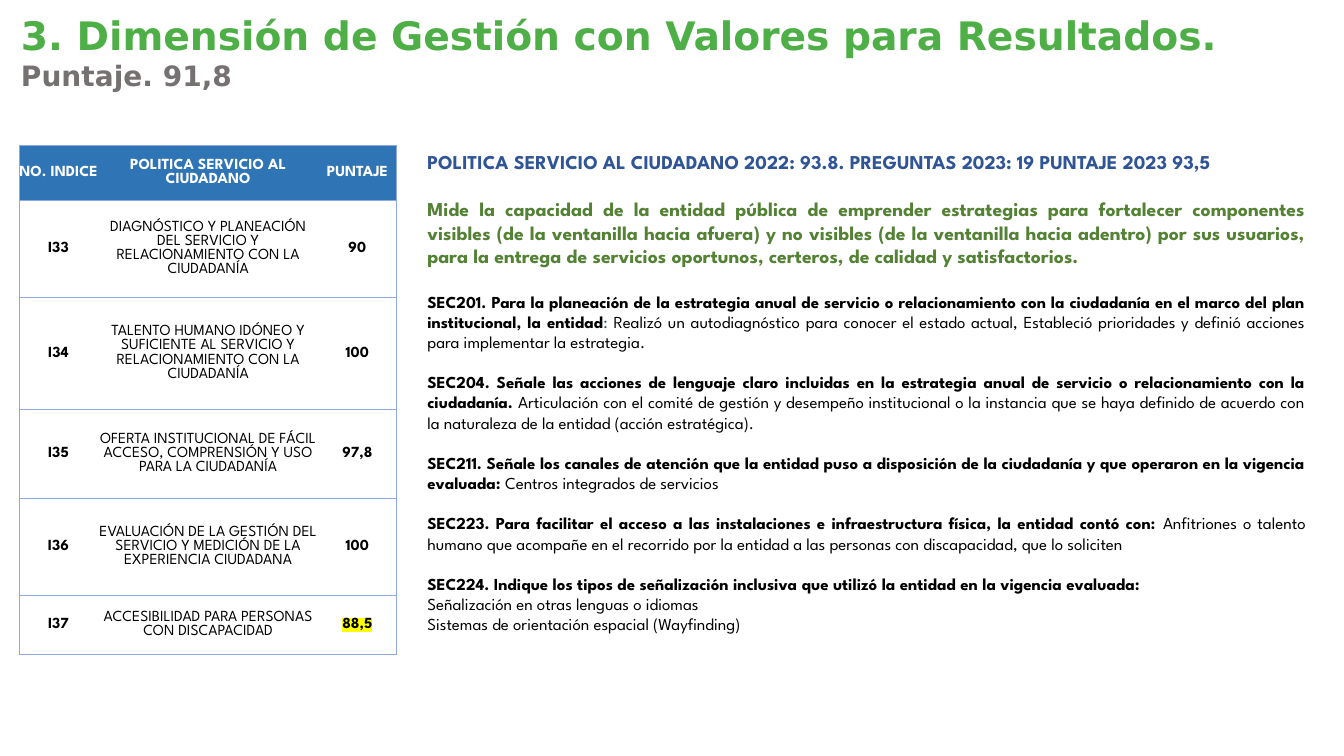
from lxml.etree import SubElement
from pptx import Presentation
from pptx.dml.color import RGBColor
from pptx.enum.text import MSO_ANCHOR, PP_ALIGN
from pptx.oxml.ns import qn
from pptx.util import Emu, Pt

PX = 9144  # one hundredth of an inch
BODY_FONT = "League Spartan"
TITLE_FONT = "DejaVu Sans"
BLACK, WHITE, HEADER_BLUE, GRID_BLUE = "000000", "FFFFFF", "2F75B5", "8EA9DB"
HEADING_BLUE, GREEN, NAVY, YELLOW = "2F5597", "548235", "004885", "FFFF00"

COLUMNS = [78, 219, 77]
ROW_HEIGHTS = [55, 96, 111, 88, 97, 58]
SCORES = [
    ("NO. INDICE", "POLITICA SERVICIO AL CIUDADANO", "PUNTAJE"),
    ("I33", "DIAGNÓSTICO Y PLANEACIÓN DEL SERVICIO Y RELACIONAMIENTO CON LA CIUDADANÍA", "90"),
    ("I34", "TALENTO HUMANO IDÓNEO Y SUFICIENTE AL SERVICIO Y RELACIONAMIENTO CON LA CIUDADANÍA", "100"),
    ("I35", "OFERTA INSTITUCIONAL DE FÁCIL ACCESO, COMPRENSIÓN Y USO PARA LA CIUDADANÍA", "97,8"),
    ("I36", "EVALUACIÓN DE LA GESTIÓN DEL SERVICIO Y MEDICIÓN DE LA EXPERIENCIA CIUDADANA", "100"),
    ("I37", "ACCESIBILIDAD PARA PERSONAS CON DISCAPACIDAD", "88,5"),
]
LOWEST_SCORE = "88,5"

TITLE = [
    ("3. Dimensión de Gestión con Valores para Resultados.", 28, "4DAF46"),
    ("Puntaje. 91,8", 20, "767171"),
]

# Each paragraph: size, space before, runs of (text, colour, bold)
DETAILS = [
    (14, 0, [("POLITICA SERVICIO AL CIUDADANO 2022: 93.8. PREGUNTAS 2023: 19 PUNTAJE 2023 93,5",
              HEADING_BLUE, True)]),
    (14, 16.8, [("Mide la capacidad de la entidad pública de emprender estrategias para fortalecer "
                 "componentes visibles (de la ventanilla hacia afuera) y no visibles (de la ventanilla "
                 "hacia adentro) por sus usuarios, para la entrega de servicios oportunos, certeros, "
                 "de calidad y satisfactorios.", GREEN, True)]),
    (12, 16.8, [("SEC201. Para la planeación de la estrategia anual de servicio o relacionamiento con "
                 "la ciudadanía en el marco del plan institucional, la entidad", BLACK, True),
                (": ", NAVY, False),
                ("Realizó un autodiagnóstico para conocer el estado actual, Estableció prioridades y "
                 "definió acciones para implementar la estrategia.", BLACK, False)]),
    (12, 14.4, [("SEC204. Señale las acciones de lenguaje claro incluidas en la estrategia anual de "
                 "servicio o relacionamiento con la ciudadanía. ", BLACK, True),
                ("Articulación con el comité de gestión y desempeño institucional o la instancia que "
                 "se haya definido de acuerdo con la naturaleza de la entidad (acción estratégica).",
                 BLACK, False)]),
    (12, 14.4, [("SEC211. Señale los canales de atención que la entidad puso a disposición de la "
                 "ciudadanía y que operaron en la vigencia evaluada: ", BLACK, True),
                ("Centros integrados de servicios", BLACK, False)]),
    (12, 14.4, [("SEC223. Para facilitar el acceso a las instalaciones e infraestructura física, la "
                 "entidad contó con: ", BLACK, True),
                ("Anfitriones o talento humano que acompañe en el recorrido por la entidad a las "
                 "personas con discapacidad, que lo soliciten", BLACK, False)]),
    (12, 14.4, [("SEC224. Indique los tipos de señalización inclusiva que utilizó la entidad en la "
                 "vigencia evaluada:", BLACK, True)]),
    (12, 0, [("Señalización en otras lenguas o idiomas", BLACK, False)]),
    (12, 0, [("Sistemas de orientación espacial (Wayfinding)", BLACK, False)]),
]


def px(n):
    return Emu(n * PX)


def rgb(value):
    return RGBColor.from_string(value)


def add_run(p, text, color, **formats):
    r = p.add_run()
    r.text = text
    r.font.color.rgb = rgb(color)
    for name, value in formats.items():
        setattr(r.font, name, value)
    return r


def add_text_frame(s, box):
    tf = s.shapes.add_textbox(*map(px, box)).text_frame
    tf.word_wrap = True
    return tf


def next_paragraph(tf, i):
    return tf.add_paragraph() if i else tf.paragraphs[0]


def set_borders(cell, visible):
    tc_pr = cell._tc.get_or_add_tcPr()
    for side in "LRTB":
        line = SubElement(tc_pr, qn(f"a:ln{side}"), w=str(Pt(0.5)))
        if side in visible:
            fill = SubElement(line, qn("a:solidFill"))
            SubElement(fill, qn("a:srgbClr"), val=GRID_BLUE)
        else:
            SubElement(line, qn("a:noFill"))


def highlight(r, color):
    mark = SubElement(r._r.rPr, qn("a:highlight"))
    SubElement(mark, qn("a:srgbClr"), val=color)
    r._r.rPr.find(qn("a:solidFill")).addnext(mark)


def add_title(s, box):
    tf = add_text_frame(s, box)
    for i, (text, size, color) in enumerate(TITLE):
        add_run(next_paragraph(tf, i), text, color, size=Pt(size), name=TITLE_FONT, bold=True)


def add_score_table(s, left, top):
    frame = s.shapes.add_table(len(SCORES), len(COLUMNS), px(left), px(top),
                               px(sum(COLUMNS)), px(sum(ROW_HEIGHTS)))
    table = frame.table
    table.first_row = table.horz_banding = False
    for column, width in zip(table.columns, COLUMNS):
        column.width = px(width)
    for row, height in zip(table.rows, ROW_HEIGHTS):
        row.height = px(height)
    cell_format = {"margin_left": 0, "margin_right": 0, "margin_top": 0, "margin_bottom": 0,
                   "vertical_anchor": MSO_ANCHOR.MIDDLE}
    for i, values in enumerate(SCORES):
        for j, text in enumerate(values):
            cell = table.cell(i, j)
            for name, value in cell_format.items():
                setattr(cell, name, value)
            set_borders(cell, ("LTB", "TB", "RTB")[j])
            cell.fill.solid()
            cell.fill.fore_color.rgb = rgb(WHITE if i else HEADER_BLUE)
            p = cell.text_frame.paragraphs[0]
            p.alignment = PP_ALIGN.CENTER
            r = add_run(p, text, BLACK if i else WHITE, size=Pt(11), name=BODY_FONT,
                        bold=i == 0 or j != 1)
            if text == LOWEST_SCORE:
                highlight(r, YELLOW)


def add_details(s, box):
    tf = add_text_frame(s, box)
    for i, (size, gap, runs) in enumerate(DETAILS):
        p = next_paragraph(tf, i)
        p.alignment = PP_ALIGN.JUSTIFY
        if gap:
            p.space_before = Pt(gap)
        for text, color, bold in runs:
            add_run(p, text, color, size=Pt(size), name=BODY_FONT, bold=bold)


def main():
    prs = Presentation()
    prs.slide_width, prs.slide_height = px(1333), px(750)
    s = prs.slides.add_slide(prs.slide_layouts[6])
    # Policy scores on the left, survey answers on the right
    add_score_table(s, 19, 144)
    add_details(s, (414, 144, 891, 495))
    # Heading
    add_title(s, (11, 6, 1212, 91))
    prs.save("out.pptx")


if __name__ == "__main__":
    main()
